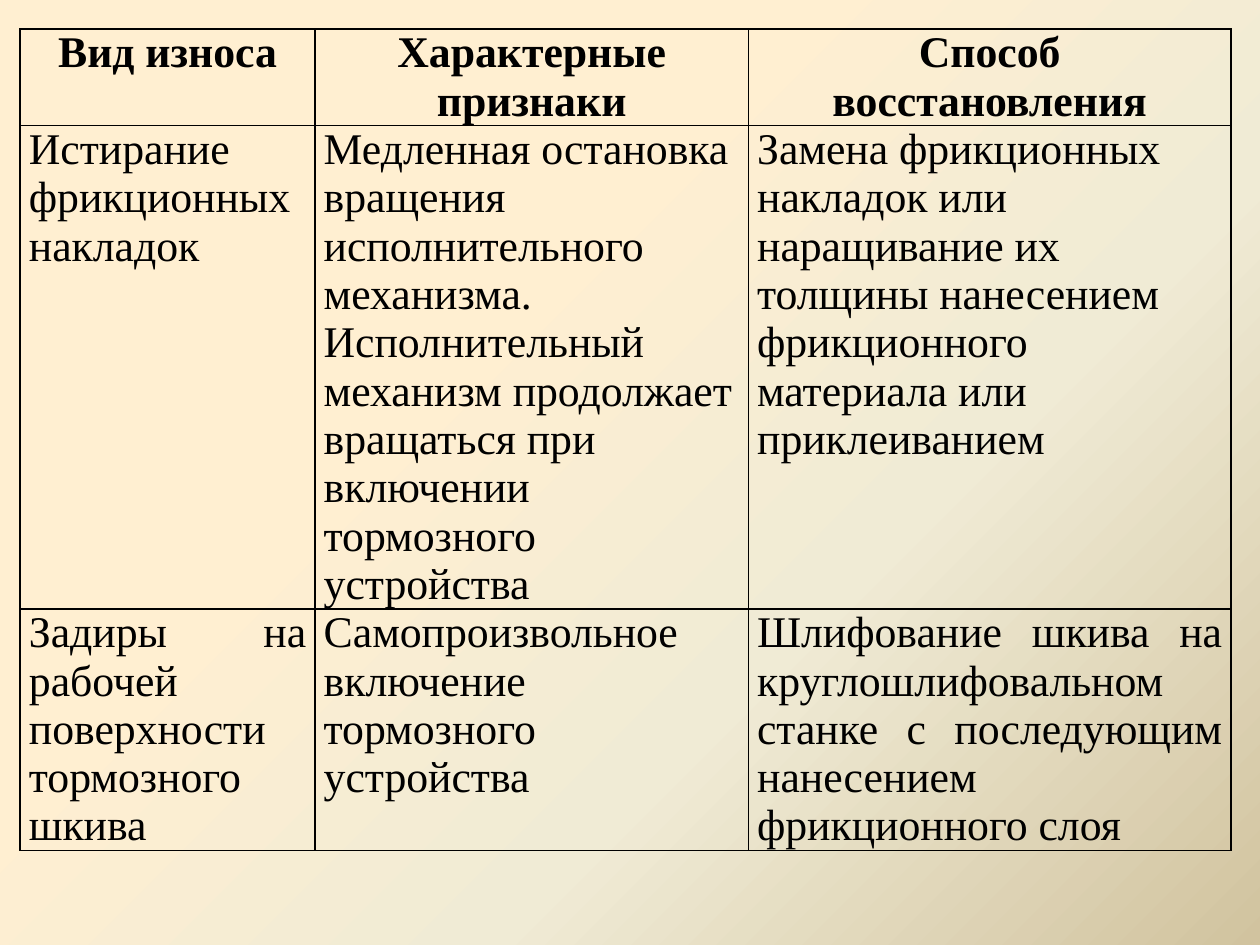
from lxml.etree import SubElement
from pptx import Presentation
from pptx.dml.color import RGBColor
from pptx.enum.text import PP_ALIGN as Align
from pptx.oxml.ns import qn
from pptx.util import Inches, Pt

BLACK = RGBColor(0x00, 0x00, 0x00)
CREAM = RGBColor(0xFF, 0xEF, 0xD1)
IVORY = RGBColor(0xF0, 0xEB, 0xD5)
SAND = RGBColor(0xD1, 0xC3, 0x9F)

COL_WIDTHS = [2.34, 3.44, 3.83]
ROW_HEIGHT = 0.41  # minimum, rows grow with their text

# alignment, space before, space after, bold, texts
ROWS = [
    (Align.CENTER, 0, 6, True, [
        "Вид износа",
        "Характерные признаки",
        "Способ восстановления"]),
    (Align.LEFT, 3, 3, False, [
        "Истирание фрикционных накладок",
        "Медленная остановка вращения исполнительного механизма. "
        "Исполнительный механизм продолжает вращаться при включении "
        "тормозного устройства",
        "Замена фрикционных накладок или наращивание их толщины "
        "нанесением фрикционного материала или приклеиванием"]),
    (Align.JUSTIFY, 3, 3, False, [
        "Задиры на рабочей поверхности тормозного шкива",
        "Самопроизвольное включение тормозного устройства",
        "Шлифование шкива на круглошлифовальном станке с последующим "
        "нанесением фрикционного слоя"]),
]


def add_color(parent, color):
    SubElement(parent, qn("a:srgbClr"), val=str(color))


def add_borders(cell, color, width):
    tcPr = cell._tc.get_or_add_tcPr()
    for i, side in enumerate(("a:lnL", "a:lnR", "a:lnT", "a:lnB")):
        ln = SubElement(tcPr, qn(side), w=str(int(width)))
        add_color(SubElement(ln, qn("a:solidFill")), color)
        tcPr.insert(i, ln)  # borders come before the fill


prs = Presentation()
prs.slide_width, prs.slide_height = Inches(10), Inches(7.5)
s = prs.slides.add_slide(prs.slide_layouts[6])

# Diagonal background gradient
fill = s.background.fill
fill.gradient()
fill.gradient_angle = 315
stops = s.background._cSld.find(".//" + qn("a:gsLst"))
for stop in list(stops):
    stops.remove(stop)
for percent, color in ((36, CREAM), (65, IVORY), (100, SAND)):
    add_color(SubElement(stops, qn("a:gs"), pos=str(percent * 1000)), color)

# Table of wear types
table = s.shapes.add_table(
    len(ROWS), len(COL_WIDTHS), Inches(0.16), Inches(0.23),
    Inches(sum(COL_WIDTHS)), Inches(ROW_HEIGHT * len(ROWS))).table
table.first_row = table.horz_banding = False
for col, width in zip(table.columns, COL_WIDTHS):
    col.width = Inches(width)

for row, (align, before, after, bold, texts) in zip(table.rows, ROWS):
    row.height = Inches(ROW_HEIGHT)
    for cell, text in zip(row.cells, texts):
        cell.fill.background()
        add_borders(cell, BLACK, Pt(1))
        cell.margin_left = cell.margin_right = Inches(0.07)
        cell.margin_top = cell.margin_bottom = 0
        p = cell.text_frame.paragraphs[0]
        p.text = text
        p.alignment = align
        p.space_before, p.space_after = Pt(before), Pt(after)
        p.font.name, p.font.size, p.font.bold = "Times New Roman", Pt(25), bold
        p.font.color.rgb = BLACK

prs.save("out.pptx")
